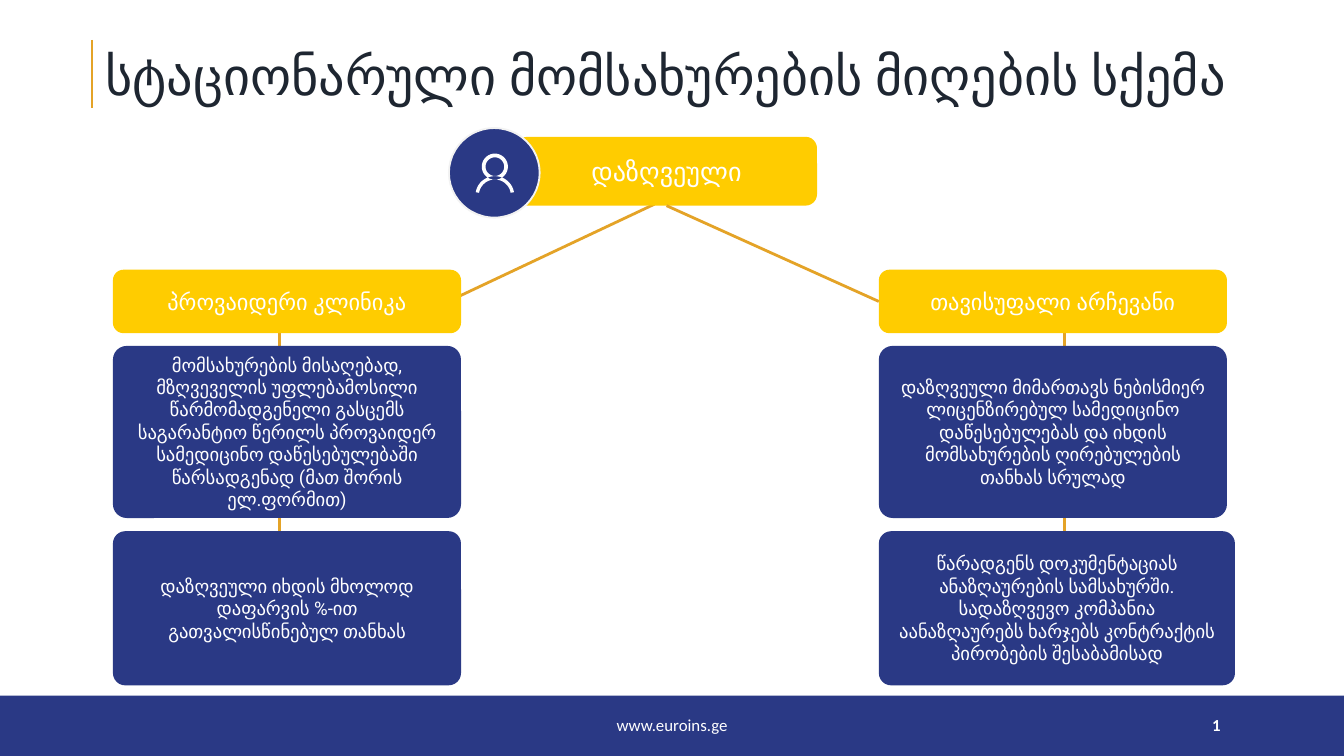
from dataclasses import dataclass
from math import cos, radians, sin

from lxml import etree
from pptx import Presentation
from pptx.dml.color import RGBColor
from pptx.enum.shapes import MSO_CONNECTOR, MSO_SHAPE
from pptx.enum.text import MSO_ANCHOR, PP_ALIGN
from pptx.oxml.ns import qn
from pptx.util import Pt

LINE = MSO_CONNECTOR.STRAIGHT
RECT, ROUNDED, OVAL = MSO_SHAPE.RECTANGLE, MSO_SHAPE.ROUNDED_RECTANGLE, MSO_SHAPE.OVAL
LEFT, CENTER, RIGHT = PP_ALIGN.LEFT, PP_ALIGN.CENTER, PP_ALIGN.RIGHT
MIDDLE = MSO_ANCHOR.MIDDLE
TITLE_ONLY = 5
SIDE_LEFT, SIDE_BOTTOM = 1, 2


@dataclass(frozen=True)
class Theme:
    navy: str = "2A3985"
    yellow: str = "FFCC00"
    gold: str = "E4A327"
    ink: str = "1E2631"
    white: str = "FFFFFF"
    rim: str = "F2F2F2"
    font: str = "Roboto"
    footer_font: str = "Calibri"
    title: float = 28
    lead: float = 14
    heading: float = 12
    body: float = 10
    footer: float = 9


def arc(cx, cy, radius, start, end, steps=36):
    """Points along a circle, from start to end degrees."""
    angles = [radians(start + (end - start) * i / steps) for i in range(steps + 1)]
    return [(Pt(cx + radius * cos(a)), Pt(cy + radius * sin(a))) for a in angles]


class Deck:
    def __init__(self, prs, theme):
        self.theme = theme
        self.s = prs.slides.add_slide(prs.slide_layouts[TITLE_ONLY])

    def style(self, p, size, color, align=CENTER, font=None, bold=False):
        p.alignment = align
        p.font.name = font or self.theme.font
        p.font.size = Pt(size)
        p.font.bold = bold
        p.font.color.rgb = RGBColor.from_string(color)

    def title(self, text, x, y, w, h):
        sp = self.s.shapes.title
        sp.left, sp.top, sp.width, sp.height = Pt(x), Pt(y), Pt(w), Pt(h)
        tf = sp.text_frame
        tf.text = text
        tf.vertical_anchor = MIDDLE
        p = tf.paragraphs[0]
        p.line_spacing = 0.9
        self.style(p, self.theme.title, self.theme.ink, LEFT)

    def paint(self, sp, fill, outline=None):
        sp.shadow.inherit = False
        sp.fill.solid()
        sp.fill.fore_color.rgb = RGBColor.from_string(fill)
        if outline:
            sp.line.color.rgb = RGBColor.from_string(outline)
            sp.line.width = Pt(1)
        else:
            sp.line.fill.background()

    def shape(self, kind, x, y, w, h, fill, outline=None):
        sp = self.s.shapes.add_shape(kind, Pt(x), Pt(y), Pt(w), Pt(h))
        self.paint(sp, fill, outline)
        return sp

    def box(self, text, x, y, w, h, fill, size, corner=0.1667):
        sp = self.shape(ROUNDED, x, y, w, h, fill)
        sp.adjustments[0] = corner
        tf = sp.text_frame
        tf.word_wrap = True
        tf.vertical_anchor = MIDDLE
        tf.text = text
        self.style(tf.paragraphs[0], size, self.theme.white)
        return sp

    def line(self, x1, y1, x2, y2, width=1.5):
        c = self.s.shapes.add_connector(LINE, Pt(x1), Pt(y1), Pt(x2), Pt(y2))
        c.line.color.rgb = RGBColor.from_string(self.theme.gold)
        c.line.width = Pt(width)
        etree.SubElement(c._element.spPr, qn("a:effectLst"))
        return c

    def footer(self, x, w, align, text, bold=False, field=False):
        """Footer text; with field, a live slide number showing text."""
        tf = self.s.shapes.add_textbox(Pt(x), Pt(377.3), Pt(w), Pt(21.6)).text_frame
        tf.word_wrap = True
        tf.vertical_anchor = MIDDLE
        p = tf.paragraphs[0]
        self.style(p, self.theme.footer, self.theme.white, align, self.theme.footer_font, bold)
        if field:
            fld = etree.SubElement(p._p, qn("a:fld"), type="slidenum",
                                   id="{B6F15528-21DE-4FAA-801E-634DDDAF4B2B}")
            etree.SubElement(fld, qn("a:rPr"), lang="en-US")
            etree.SubElement(fld, qn("a:t")).text = text
        else:
            p.add_run().text = text

    def person(self, cx, head_y, shoulder_y):
        contours = [
            arc(cx, head_y, 7, 0, 360),
            arc(cx, head_y, 5, 0, 360),
            arc(cx, shoulder_y, 10.4, 190, 350) + arc(cx, shoulder_y, 8.6, 350, 190),
        ]
        builder = self.s.shapes.build_freeform(*contours[0][0])
        for i, points in enumerate(contours):
            if i:
                builder.move_to(*points[0])
            builder.add_line_segments(points[1:], close=True)
        self.paint(builder.convert_to_shape(), self.theme.white)


COLUMNS = [
    {
        "x": 60.5, "line_x": 149.8, "last_w": 186.5,
        "heading": "პროვაიდერი კლინიკა",
        "steps": [
            "მომსახურების მისაღებად, მზღვეველის უფლებამოსილი წარმომადგენელი გასცემს "
            "საგარანტიო წერილს პროვაიდერ სამედიცინო დაწესებულებაში წარსადგენად "
            "(მათ შორის ელ.ფორმით)",
            "დაზღვეული იხდის მხოლოდ დაფარვის %-ით გათვალისწინებულ თანხას",
        ],
    },
    {
        "x": 470.8, "line_x": 570.2, "last_w": 190.8,
        "heading": "თავისუფალი არჩევანი",
        "steps": [
            "დაზღვეული მიმართავს ნებისმიერ ლიცენზირებულ სამედიცინო დაწესებულებას "
            "და იხდის მომსახურების ღირებულების თანხას სრულად",
            "წარადგენს დოკუმენტაციას ანაზღაურების სამსახურში.\v"
            "სადაზღვევო კომპანია აანაზღაურებს ხარჯებს კონტრაქტის პირობების შესაბამისად",
        ],
    },
]
COLUMN_W = 186.5
STEP_ROWS = [(185.3, 92.2), (284.6, 82.6)]


def main():
    prs = Presentation()
    prs.slide_width, prs.slide_height = Pt(720), Pt(405)
    theme = Theme()
    deck = Deck(prs, theme)

    deck.shape(RECT, 0, 372.7, 720, 32.3, theme.navy)
    deck.line(49.4, 21.4, 49.4, 57.6, width=1)
    deck.title("სტაციონარული მომსახურების მიღების სქემა", 49.4, 21.4, 621, 41.8)
    deck.footer(238.5, 243, CENTER, "www.euroins.ge")
    deck.footer(514, 147, RIGHT, "2", bold=True, field=True)

    deck.line(350.6, 109.4, 240.5, 161.3)
    insured = deck.box("დაზღვეული", 276.5, 73.3, 161.2, 36.9, theme.yellow, theme.lead)
    headings = []
    for col in COLUMNS:
        for y in (165.5, 261.5):
            deck.line(col["line_x"], y, col["line_x"], y + 49)
        headings.append(deck.box(col["heading"], col["x"], 144.5, COLUMN_W, 34,
                                 theme.yellow, theme.heading))
        widths = (COLUMN_W, col["last_w"])
        for text, (y, h), w in zip(col["steps"], STEP_ROWS, widths):
            deck.box(text, col["x"], y, w, h, theme.navy, theme.body, corner=0.08)

    link = deck.line(470.8, 161.5, 357, 110.2)
    link.begin_connect(headings[1], SIDE_LEFT)
    link.end_connect(insured, SIDE_BOTTOM)

    deck.shape(OVAL, 240.5, 68.6, 48.6, 48, theme.navy, theme.rim)
    deck.person(265.1, 89.3, 104.8)

    prs.save("out.pptx")


if __name__ == "__main__":
    main()
